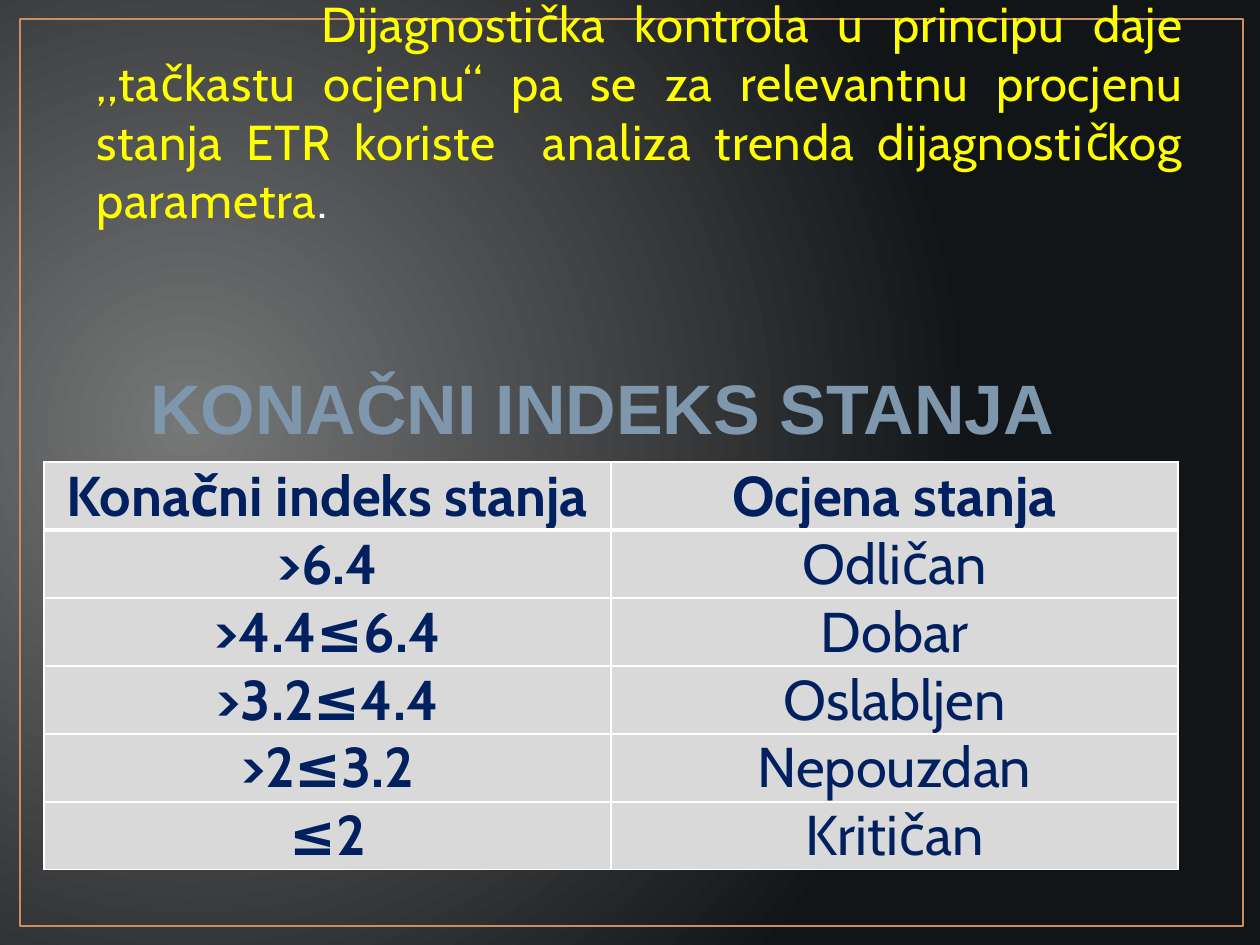
from lxml.etree import SubElement
from pptx import Presentation
from pptx.dml.color import RGBColor
from pptx.enum.shapes import MSO_SHAPE
from pptx.enum.text import MSO_ANCHOR, PP_ALIGN
from pptx.oxml import parse_xml
from pptx.oxml.ns import nsdecls, qn
from pptx.util import Pt

EMU_PER_PX = 914400 / 126
NAVY, WHITE = "002060", "FFFFFF"
INTRO = ("Dijagnostička kontrola u principu daje „tačkastu ocjenu“ pa se za relevantnu "
         "procjenu stanja ETR koriste  analiza trenda dijagnostičkog parametra")
RATINGS = [
    ("Konačni indeks stanja", "Ocjena stanja"),
    (">6.4", "Odličan"),
    (">4.4≤6.4", "Dobar"),
    (">3.2≤4.4", "Oslabljen"),
    (">2≤3.2", "Nepouzdan"),
    ("≤2", "Kritičan"),
]


def px(length):
    """Turn pixels into EMU."""
    return round(length * EMU_PER_PX)


def color(hex_code):
    """Turn a hex string into a colour."""
    return RGBColor.from_string(hex_code)


def style(run, face, size, hex_code, bold=False):
    """Set the font of a run."""
    run.font.name = face
    run.font.size = Pt(size)
    run.font.bold = bold
    run.font.color.rgb = color(hex_code)


def paint_background(slide):
    """Fill the background with an off-centre radial gradient."""
    fill = slide.background.fill
    fill.solid()
    solid = slide.background._cSld.bg.bgPr.find(qn("a:solidFill"))
    solid.getparent().replace(solid, parse_xml(
        f'<a:gradFill {nsdecls("a")} rotWithShape="1"><a:gsLst>'
        '<a:gs pos="0"><a:srgbClr val="767777"/></a:gs>'
        '<a:gs pos="100000"><a:srgbClr val="121518"/></a:gs></a:gsLst>'
        '<a:path path="circle"><a:fillToRect l="15000" t="50000" r="85000" b="60000"/>'
        '</a:path></a:gradFill>'))


def add_frame(slide, left, top, width, height):
    """Draw the thin frame around the slide."""
    frame = slide.shapes.add_shape(MSO_SHAPE.RECTANGLE, px(left), px(top), px(width), px(height))
    frame.shadow.inherit = False
    frame.fill.background()
    frame.line.color.rgb = color("CC8E60")
    frame.line.width = Pt(1.5)


def add_intro(slide, left, top, width, height):
    """Place the justified statement with its indented first line."""
    intro = slide.shapes.add_textbox(px(left), px(top), px(width), px(height)).text_frame
    intro.word_wrap = True
    intro.vertical_anchor = MSO_ANCHOR.BOTTOM
    statement = intro.paragraphs[0]
    statement.alignment = PP_ALIGN.JUSTIFY
    statement._p.get_or_add_pPr().set("indent", str(px(225)))
    for words, hex_code in ((INTRO, "FFFF00"), (".", WHITE)):
        run = statement.add_run()
        run.text = words
        style(run, "Cabin", 28, hex_code)
        run.font._element.set("spc", "50")


def add_heading(slide, left, top, width, height):
    """Place the heading above the table."""
    heading = slide.shapes.add_textbox(px(left), px(top), px(width), px(height)).text_frame
    heading.margin_top = heading.margin_bottom = 0
    heading.word_wrap = False
    heading.vertical_anchor = MSO_ANCHOR.MIDDLE
    heading.text = "KONAČNI INDEKS STANJA"
    heading.paragraphs[0].alignment = PP_ALIGN.CENTER
    style(heading.paragraphs[0].runs[0], "Arial", 40, "7E97AD", True)


def add_borders(cell, widths):
    """Give a cell white borders of the given point widths."""
    properties = cell._tc.get_or_add_tcPr()
    for place, (side, width) in enumerate(widths.items()):
        line = parse_xml(f'<a:ln{side} {nsdecls("a")} w="{Pt(width)}"/>')
        fill = SubElement(line, qn("a:solidFill"))
        SubElement(fill, qn("a:srgbClr")).set("val", WHITE)
        properties.insert(place, line)


def add_ratings(slide, left, top, width, height):
    """Place the table of index ranges and ratings."""
    table = slide.shapes.add_table(len(RATINGS), 2, px(left), px(top), px(width), px(height)).table
    for row, labels in enumerate(RATINGS):
        for column, label in enumerate(labels):
            cell = table.cell(row, column)
            cell.margin_left = cell.margin_right = px(9)
            cell.margin_top = cell.margin_bottom = 0
            cell.fill.solid()
            cell.fill.fore_color.rgb = color("D9D9D9")
            cell.text_frame.text = label
            paragraph = cell.text_frame.paragraphs[0]
            paragraph.alignment = PP_ALIGN.CENTER
            style(paragraph.runs[0], "Cabin", 32, NAVY, row == 0 or column == 0)
            add_borders(cell, {"L": 1, "R": 1, "T": 3 if row == 1 else 1, "B": 3 if row == 0 else 1})


def main():
    """Build and save the slide."""
    deck = Presentation()
    deck.slide_width, deck.slide_height = px(1260), px(945)
    slide = deck.slides.add_slide(deck.slide_layouts[6])
    paint_background(slide)
    add_frame(slide, 20, 19, 1223, 907)
    add_intro(slide, 84, 38, 1113, 197)
    add_ratings(slide, 44, 462, 1134, 408)
    add_heading(slide, 133, 367, 939, 80)
    deck.save("out.pptx")


if __name__ == "__main__":
    main()
